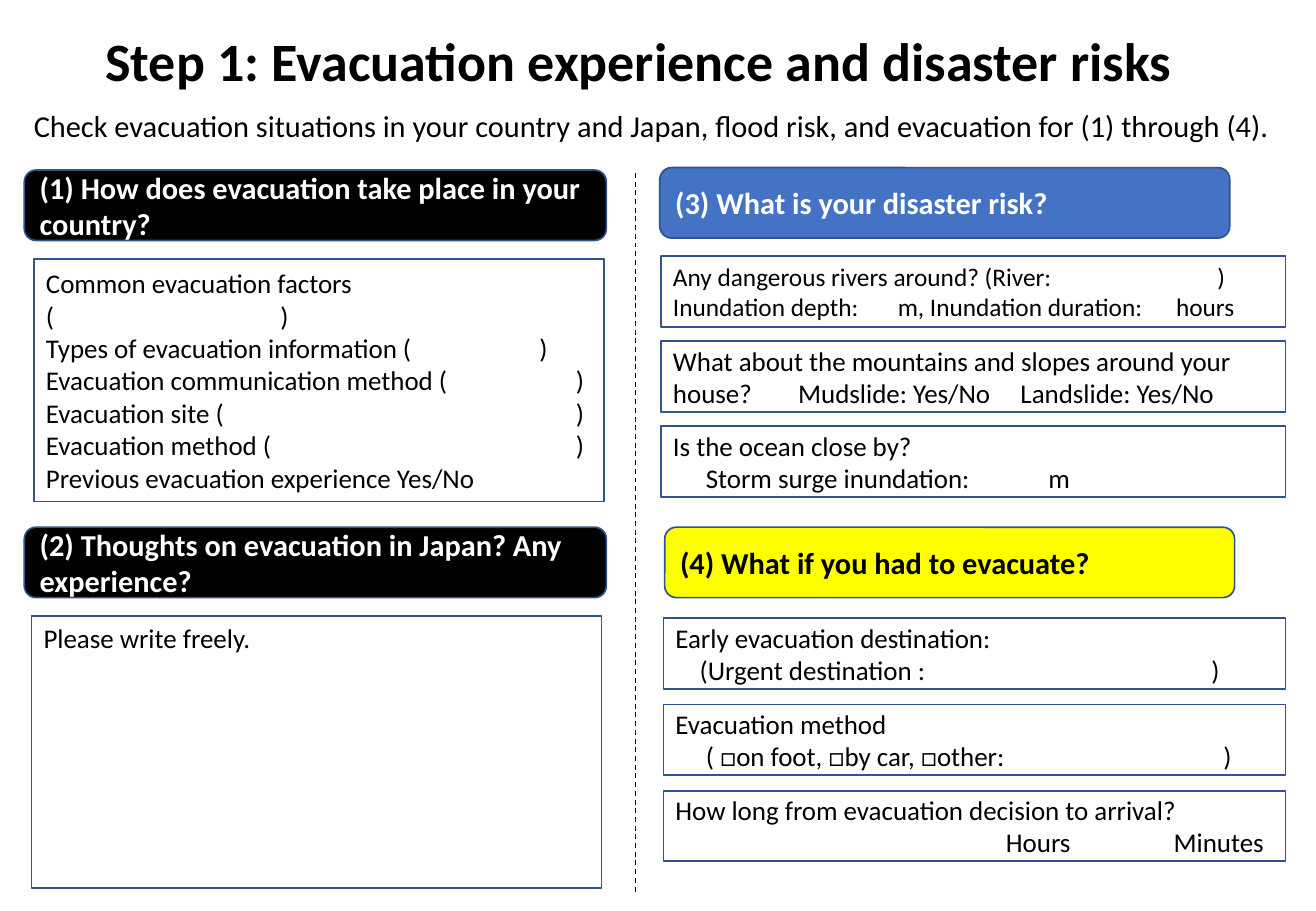
"""Build the evacuation experience and disaster risk worksheet slide."""
from lxml.etree import SubElement
from pptx import Presentation
from pptx.dml.color import RGBColor
from pptx.enum.dml import MSO_LINE
from pptx.enum.shapes import MSO_CONNECTOR, MSO_SHAPE
from pptx.enum.text import MSO_ANCHOR, MSO_AUTO_SIZE, PP_ALIGN
from pptx.oxml.ns import qn
from pptx.util import Inches, Pt

BLACK = RGBColor(0x00, 0x00, 0x00)
WHITE = RGBColor(0xFF, 0xFF, 0xFF)
BLUE = RGBColor(0x44, 0x72, 0xC4)
YELLOW = RGBColor(0xFF, 0xFF, 0x00)
OUTLINE = RGBColor(0x31, 0x53, 0x8F)
ROW_HEIGHT = 0.58


def write(frame, lines, size, color=BLACK, bold=False, anchor=MSO_ANCHOR.MIDDLE, align=PP_ALIGN.LEFT):
    """Fill a frame with (text, tab stops in inches) lines."""
    frame_format = {"word_wrap": True, "auto_size": MSO_AUTO_SIZE.NONE, "vertical_anchor": anchor}
    for name, value in frame_format.items():
        setattr(frame, name, value)
    frame.text = "\n".join(text for text, stops in lines)
    font_format = {"name": "Calibri", "size": Pt(size), "bold": bold}
    for paragraph, (text, stops) in zip(frame.paragraphs, lines):
        paragraph.alignment = align
        for run in paragraph.runs:
            for name, value in font_format.items():
                setattr(run.font, name, value)
            run.font.color.rgb = color
        if stops:
            tab_list = SubElement(paragraph._p.get_or_add_pPr(), qn("a:tabLst"))
            for stop in stops:
                SubElement(tab_list, qn("a:tab"), pos=str(Inches(stop)), algn="l")


def add_panel(kind, left, top, width, height, fill=None):
    """Add an outlined panel and return its text frame."""
    panel = slide.shapes.add_shape(kind, Inches(left), Inches(top), Inches(width), Inches(height))
    panel.shadow.inherit = False
    panel.line.color.rgb = OUTLINE
    panel.line.width = Pt(1)
    if fill is None:
        panel.fill.background()
    else:
        panel.fill.solid()
        panel.fill.fore_color.rgb = fill
    return panel.text_frame


deck = Presentation()
deck.slide_width, deck.slide_height = Inches(10.83), Inches(7.5)
slide = deck.slides.add_slide(deck.slide_layouts[5])

title = slide.shapes.title
title_place = {"left": 0, "top": 0.14, "width": 10.52, "height": 0.71}
for name, value in title_place.items():
    setattr(title, name, Inches(value))
write(title.text_frame, [("Step 1: Evacuation experience and disaster risks", ())], 32,
      bold=True, align=PP_ALIGN.CENTER)

instruction = slide.shapes.add_textbox(Inches(0.18), Inches(0.81), Inches(10.43), Inches(0.45))
write(instruction.text_frame, [(
    "Check evacuation situations in your country and Japan, flood risk, "
    "and evacuation for (1) through (4).", ())], 18)

divider = slide.shapes.add_connector(
    MSO_CONNECTOR.STRAIGHT, Inches(5.23), Inches(7.34), Inches(5.23), Inches(1.4))
divider.line.color.rgb = BLACK
divider.line.width = Pt(0.75)
divider.line.dash_style = MSO_LINE.DASH
SubElement(divider._element.spPr, qn("a:effectLst"))

headings = [
    ("(1) How does evacuation take place in your country?", 0.2, 1.4, 4.79, BLACK, WHITE),
    ("(2) Thoughts on evacuation in Japan? Any experience?", 0.2, 4.34, 4.79, BLACK, WHITE),
    ("(3) What is your disaster risk?", 5.43, 1.38, 4.69, BLUE, WHITE),
    ("(4) What if you had to evacuate?", 5.47, 4.34, 4.69, YELLOW, BLACK),
]
for question, left, top, width, fill, color in headings:
    heading = add_panel(MSO_SHAPE.ROUNDED_RECTANGLE, left, top, width, ROW_HEIGHT, fill)
    write(heading, [(question, ())], 18, color, bold=True)

home_country = add_panel(MSO_SHAPE.RECTANGLE, 0.28, 2.13, 4.69, 2)
write(home_country, [
    ("Common evacuation factors\v(\t)", (1.93,)),
    ("Types of evacuation information (\t)", (4.06,)),
    ("Evacuation communication method (\t)", (4.36,)),
    ("Evacuation site (\t)", (4.36,)),
    ("Evacuation method (\t)", (4.36,)),
    ("Previous evacuation experience Yes/No", ()),
], 16)

free_thoughts = add_panel(MSO_SHAPE.RECTANGLE, 0.26, 5.07, 4.69, 2.24)
write(free_thoughts, [("Please write freely.", ())], 16, anchor=MSO_ANCHOR.TOP)

risk_answers = [
    (15, [("Any dangerous rivers around? (River:\t)", (4.48,)),
          ("Inundation depth:\tm, Inundation duration:\thours", (1.85, 4.14))]),
    (16, [("What about the mountains and slopes around your house?\tMudslide: Yes/No\tLandslide: Yes/No",
           (1.03, 2.86))]),
    (16, [("Is the ocean close by?", ()),
          ("\tStorm surge inundation:\tm", (0.27, 3.09))]),
]
evacuation_answers = [
    (16, [("Early evacuation destination:", ()),
          ("\t(Urgent destination :\t)", (0.2, 4.41))]),
    (16, [("Evacuation method", ()),
          ("\t( □on foot, □by car, □other:\t)", (0.25, 4.51))]),
    (16, [("How long from evacuation decision to arrival?", ()),
          ("\tHours\tMinutes", (2.72, 4.1))]),
]
answer_columns = [
    (risk_answers, 5.44, 2.11, 5.14, 0.7),
    (evacuation_answers, 5.46, 5.09, 5.12, 0.71),
]
for answers, left, top, width, pitch in answer_columns:
    for row, (size, lines) in enumerate(answers):
        answer = add_panel(MSO_SHAPE.RECTANGLE, left, top + row * pitch, width, ROW_HEIGHT)
        write(answer, lines, size)

deck.save("out.pptx")
